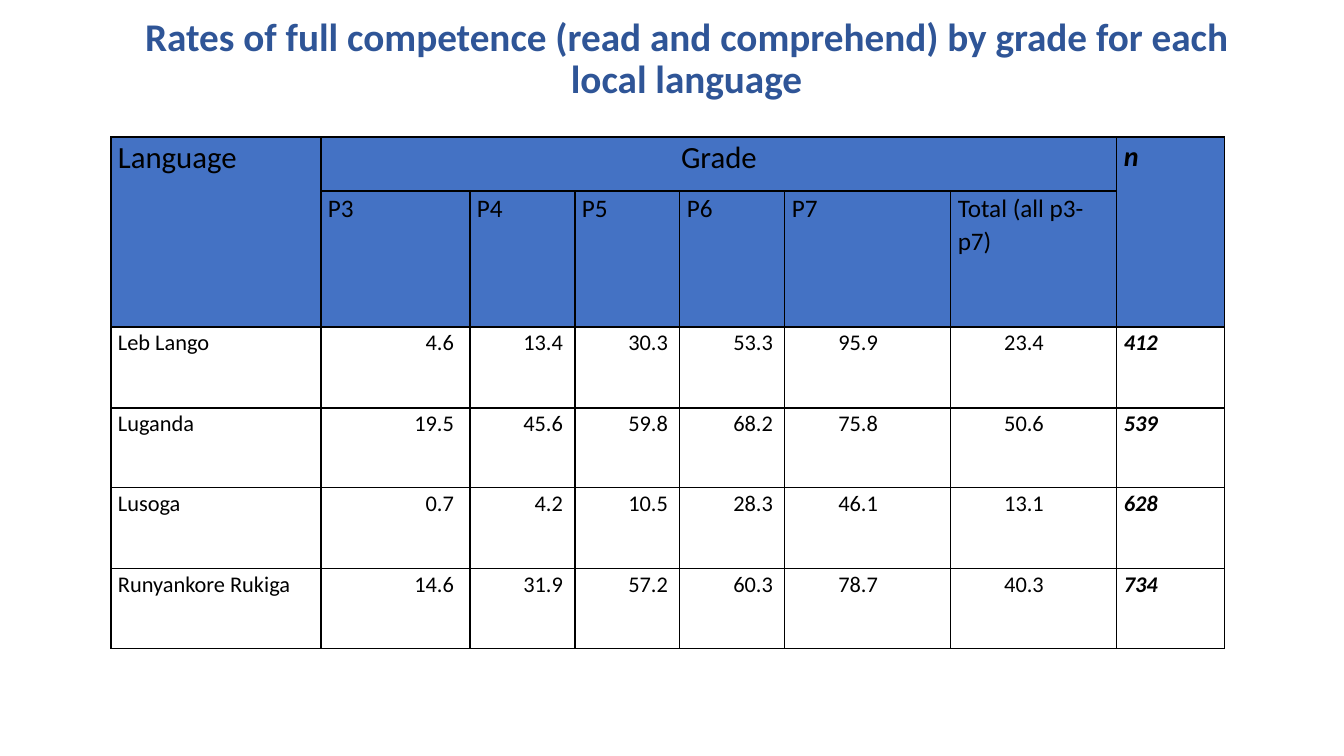
from dataclasses import dataclass

from lxml import etree
from pptx import Presentation, util as u
from pptx.dml.color import RGBColor
from pptx.enum import text
from pptx.oxml import ns


@dataclass(frozen=True)
class Theme:
    font: str = "Calibri"
    title: str = "2F5597"
    head: str = "4472C4"
    ink: str = "000000"
    big: int = 28
    group: int = 22
    count: int = 20
    grade: int = 18
    body: int = 16
    rule: int = 1


LEFT, MID, RIGHT = text.PP_ALIGN.LEFT, text.PP_ALIGN.CENTER, text.PP_ALIGN.RIGHT
WIDTHS = (210, 149, 105, 105, 105, 166, 166, 108)
HEIGHTS = (54, 136, 81, 80, 81, 80)
PADS = (7, 16, 12, 12, 12, 73, 73, 7)
GRADES = ("P3", "P4", "P5", "P6", "P7", "Total (all p3-p7)")
RATES = (
    ("Leb Lango", 4.6, 13.4, 30.3, 53.3, 95.9, 23.4, 412),
    ("Luganda", 19.5, 45.6, 59.8, 68.2, 75.8, 50.6, 539),
    ("Lusoga", 0.7, 4.2, 10.5, 28.3, 46.1, 13.1, 628),
    ("Runyankore Rukiga", 14.6, 31.9, 57.2, 60.3, 78.7, 40.3, 734),
)


def px(n):
    return u.Emu(round(n * 914400 / 100.8))


class Deck:
    def __init__(self, theme):
        self.theme = theme
        self.deck = Presentation()
        self.deck.slide_width, self.deck.slide_height = px(1344), px(756)
        self.slide = self.deck.slides.add_slide(self.deck.slide_layouts[6])

    def label(self, frame, words, size, color, align=LEFT, space=1.07, bold=False, slant=False):
        frame.text = words
        frame.word_wrap = True
        para = frame.paragraphs[0]
        para.alignment, para.line_spacing = align, space
        for run in para.runs:
            font = run.font
            font.name, font.size = self.theme.font, u.Pt(size)
            font.bold, font.italic = bold, slant
            font.color.rgb = RGBColor.from_string(color)

    def title(self, words, x, y, w, h):
        frame = self.slide.shapes.add_textbox(px(x), px(y), px(w), px(h)).text_frame
        frame.vertical_anchor = text.MSO_ANCHOR.BOTTOM
        self.label(frame, words, self.theme.big, self.theme.title, MID, 0.9, True)

    def table(self, x, y, widths, heights):
        grid = self.slide.shapes.add_table(
            len(heights), len(widths), px(x), px(y), px(sum(widths)), px(sum(heights))
        ).table
        grid.first_row = grid.horz_banding = False
        for col, w in zip(grid.columns, widths):
            col.width = px(w)
        for row, h in zip(grid.rows, heights):
            row.height = px(h)
        for cell in grid.iter_cells():
            cell.margin_left = cell.margin_right = px(7)
            cell.margin_top = cell.margin_bottom = 0
            self.border(cell)
            cell.fill.background()
        return grid

    def border(self, cell):
        props = cell._tc.get_or_add_tcPr()
        for side in ("lnL", "lnR", "lnT", "lnB"):
            line = etree.SubElement(props, ns.qn("a:" + side), w=str(u.Pt(self.theme.rule)))
            fill = etree.SubElement(line, ns.qn("a:solidFill"))
            etree.SubElement(fill, ns.qn("a:srgbClr"), val=self.theme.ink)

    def cell(self, cell, words, size, pad=7, **style):
        cell.margin_right = px(pad)
        self.label(cell.text_frame, words, size, self.theme.ink, **style)

    def shade(self, cell):
        cell.fill.solid()
        cell.fill.fore_color.rgb = RGBColor.from_string(self.theme.head)


def main():
    theme = Theme()
    deck = Deck(theme)
    deck.title(
        "Rates of full competence (read and comprehend) by grade for each local language",
        112, 42, 1149, 65,
    )
    grid = deck.table(111, 137, WIDTHS, HEIGHTS)
    last = len(WIDTHS) - 1
    for row in range(2):
        for col in range(last + 1):
            deck.shade(grid.cell(row, col))
    for first, end in (((0, 0), (1, 0)), ((0, 1), (0, last - 1)), ((0, last), (1, last))):
        grid.cell(*first).merge(grid.cell(*end))
    deck.cell(grid.cell(0, 0), "Language", theme.group)
    deck.cell(grid.cell(0, 1), "Grade", theme.group, align=MID)
    deck.cell(grid.cell(0, last), "n", theme.count, bold=True, slant=True)
    for col, grade in enumerate(GRADES, 1):
        deck.cell(grid.cell(1, col), grade, theme.grade)
    for row, rates in enumerate(RATES, 2):
        for col, (rate, pad) in enumerate(zip(rates, PADS)):
            count = col == last
            align = RIGHT if 0 < col < last else LEFT
            deck.cell(grid.cell(row, col), str(rate), theme.body, pad,
                      align=align, bold=count, slant=count)
    deck.deck.save("out.pptx")


if __name__ == "__main__":
    main()
